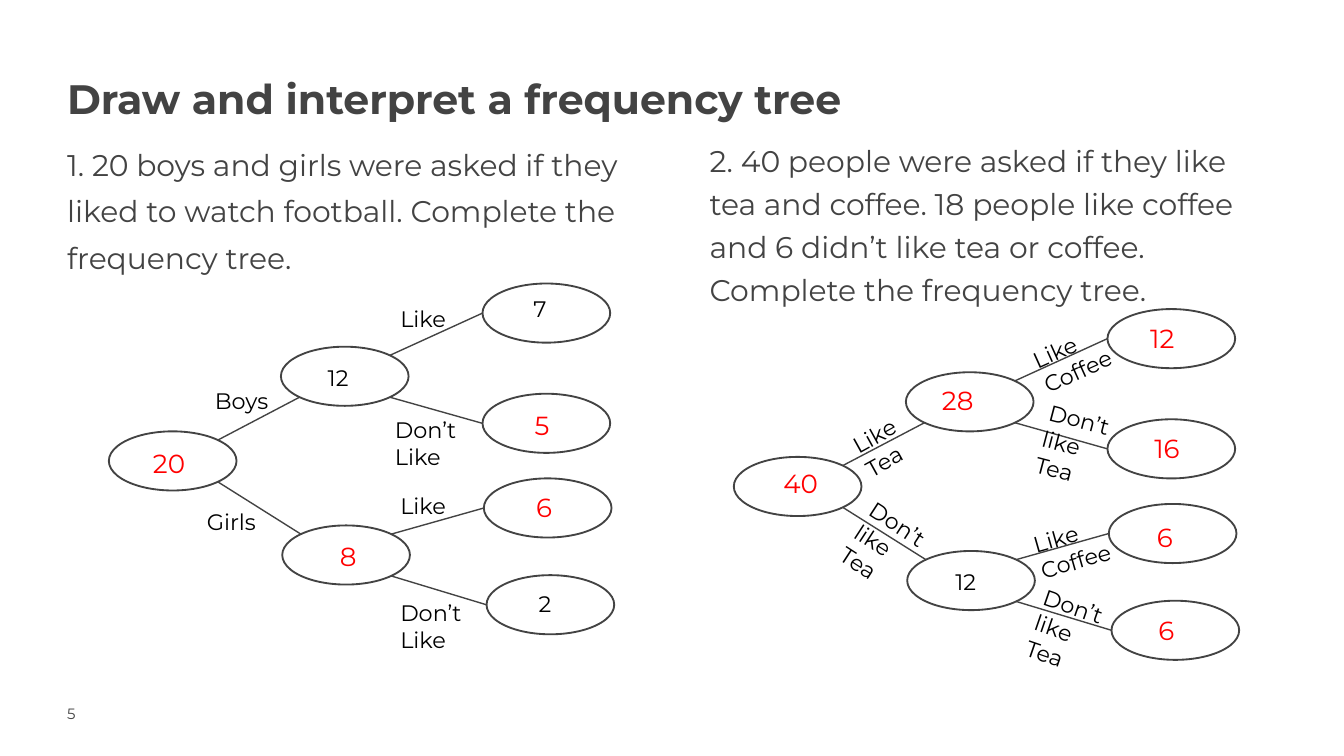
"""Build a slide with two frequency trees and their questions."""
from dataclasses import dataclass
from math import sqrt

from lxml import etree
from pptx import Presentation
from pptx.dml.color import RGBColor
from pptx.enum.shapes import MSO_CONNECTOR, MSO_SHAPE
from pptx.enum.text import MSO_ANCHOR, PP_ALIGN
from pptx.oxml.ns import qn
from pptx.util import Inches, Pt

ELLIPSE = MSO_SHAPE.OVAL
STRAIGHT = MSO_CONNECTOR.STRAIGHT
TOP = MSO_ANCHOR.TOP
LEFT = PP_ALIGN.LEFT


@dataclass(frozen=True)
class Theme:
    font: str = "Montserrat"
    grey: RGBColor = RGBColor(0x43, 0x43, 0x43)
    black: RGBColor = RGBColor(0, 0, 0)
    red: RGBColor = RGBColor(0xFF, 0, 0)
    white: RGBColor = RGBColor(0xFF, 0xFF, 0xFF)
    title: int = 22
    question: int = 16
    answer: int = 14
    label: int = 12
    page: int = 8


THEME = Theme()


def write(frame, lines, size, color, spacing=1.0, inset=(0, 0), bold=False):
    frame.word_wrap = True
    frame.vertical_anchor = TOP
    frame.margin_left = frame.margin_right = Inches(inset[0])
    frame.margin_top = frame.margin_bottom = Inches(inset[1])
    for index, line in enumerate(lines):
        paragraph = frame.add_paragraph() if index else frame.paragraphs[0]
        paragraph.alignment = LEFT
        paragraph.line_spacing = spacing
        run = paragraph.add_run()
        run.text = line
        run.font.name = THEME.font
        run.font.size = Pt(size)
        run.font.bold = bold
        run.font.color.rgb = color


def add_text(box, lines, size, color, spacing=1.0, inset=(0, 0), rotation=0):
    area = slide.shapes.add_textbox(*map(Inches, box))
    area.rotation = rotation
    write(area.text_frame, lines, size, color, spacing, inset)


prs = Presentation()
prs.slide_width = Inches(10)
prs.slide_height = Inches(10 * 9 / 16)
slide = prs.slides.add_slide(prs.slide_layouts[5])

title = slide.shapes.title
title.left, title.top, title.width, title.height = map(Inches, (0.5, 0.49, 7.37, 0.52))
write(title.text_frame, ["Draw and interpret a frequency tree"],
      THEME.title, THEME.grey, 1.15, bold=True)

football = ["1. 20 boys and girls were asked if they liked to watch football. "
            "Complete the frequency tree."]
drinks = ["2. 40 people were asked if they like tea and coffee. "
          "18 people like coffee and 6 didn’t like tea or coffee.",
          "Complete the frequency tree."]
add_text((0.5, 1.01, 4.26, 4.43), football, THEME.question, THEME.grey, 1.3)
add_text((0.5, 5.24, 0.79, 0.2), ["5"], THEME.page, THEME.grey)
add_text((5.28, 1.01, 4.17, 4.34), drinks, THEME.question, THEME.grey, 1.2)

NODE_W, NODE_H = 0.95, 0.44
DIAGONAL = 1 / (2 * sqrt(2))
nodes = {
    "root": (0.81, 3.21),
    "upper": (2.09, 2.58),
    "lower": (2.1, 3.91),
    "upper no": (3.59, 2.93),
    "upper yes": (3.59, 2.11),
    "lower no": (3.62, 4.28),
    "lower yes": (3.6, 3.56),
}
branches = [
    ("root", "upper", -1), ("root", "lower", 1),
    ("upper", "upper yes", -1), ("upper", "upper no", 1),
    ("lower", "lower yes", -1), ("lower", "lower no", 1),
]

for shift_x, shift_y in ((0, 0), (4.65, 0.19)):
    centres = {}
    for name, (x, y) in nodes.items():
        x, y = x + shift_x, y + shift_y
        centres[name] = (x + NODE_W / 2, y + NODE_H / 2)
        node = slide.shapes.add_shape(ELLIPSE, *map(Inches, (x, y, NODE_W, NODE_H)))
        node.shadow.inherit = False
        node.fill.solid()
        node.fill.fore_color.rgb = THEME.white
        node.line.color.rgb = THEME.grey
        node.line.width = Pt(1)
    for parent, child, side in branches:
        start_x, start_y = centres[parent]
        end_x, end_y = centres[child]
        start_x += NODE_W * DIAGONAL
        start_y += side * NODE_H * DIAGONAL
        if parent == "root":
            end_x -= NODE_W * DIAGONAL
            end_y -= side * NODE_H * DIAGONAL
        else:
            end_x -= NODE_W / 2
        branch = slide.shapes.add_connector(
            STRAIGHT, *map(Inches, (start_x, start_y, end_x, end_y)))
        branch.line.color.rgb = THEME.grey
        branch.line.width = Pt(0.75)
        etree.SubElement(branch._element.spPr, qn("a:effectLst"))

LABEL_W = 0.78
INSET = (0.1, 0.05)
labels = [
    ("Boys", 1.5, 2.83, 0.3, 0),
    ("Girls", 1.44, 3.73, 0.3, 0),
    ("Like", 2.88, 3.61, 0.3, 0),
    ("Like", 2.88, 2.22, 0.3, 0),
    ("Don’t Like", 2.88, 4.41, 0.5, 0),
    ("Don’t Like", 2.84, 3.05, 0.5, 0),
    ("12", 2.34, 2.66, 0.3, 0),
    ("7", 3.87, 2.15, 0.3, 0),
    ("2", 3.91, 4.34, 0.3, 0),
    ("Like Tea", 6.27, 3.02, 0.5, 330.9),
    ("Like Coffee", 7.61, 2.41, 0.5, 335.7),
    ("Don’t like Tea", 6.23, 3.75, 0.71, 33),
    ("12", 7.01, 4.18, 0.3, 0),
    ("Like Coffee", 7.61, 3.82, 0.5, 344.1),
    ("Don’t like Tea", 7.65, 2.98, 0.71, 14.7),
    ("Don’t like Tea", 7.59, 4.37, 0.71, 19),
]
for label, x, y, height, rotation in labels:
    add_text((x, y, LABEL_W, height), [label], THEME.label, THEME.black,
             inset=INSET, rotation=rotation)

answers = [
    ("5", 3.88, 3, 0.42), ("6", 3.89, 3.61, 0.42),
    ("8", 2.43, 3.97, 0.42), ("20", 1.04, 3.28, 0.47),
    ("40", 5.73, 3.43, 0.48), ("28", 6.91, 2.81, 0.48),
    ("12", 8.46, 2.35, 0.52), ("16", 8.49, 3.17, 0.52),
    ("6", 8.51, 3.83, 0.52), ("6", 8.52, 4.52, 0.52),
]
for answer, x, y, width in answers:
    add_text((x, y, width, 0.34), [answer], THEME.answer, THEME.red, inset=INSET)

prs.save("out.pptx")
